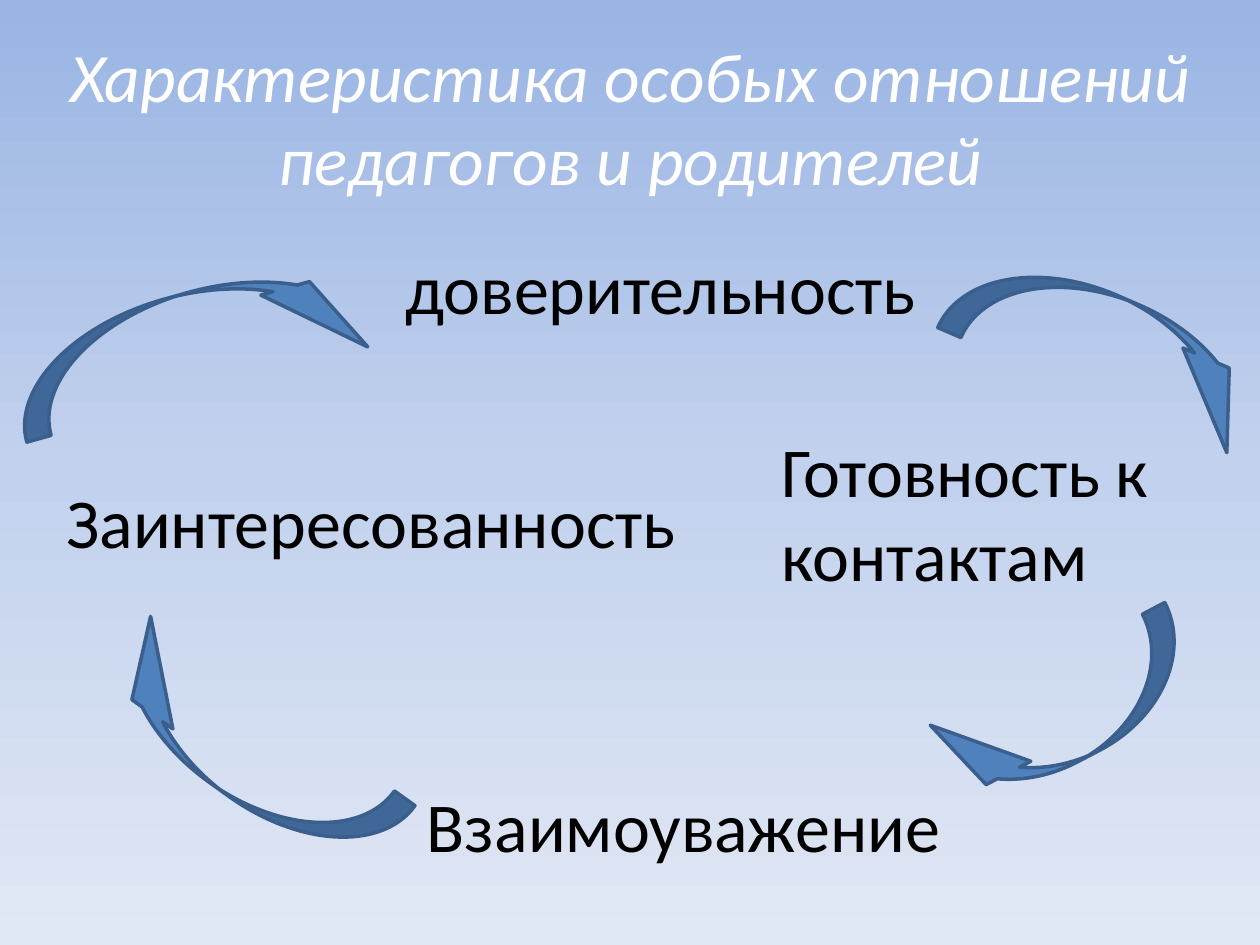
from copy import deepcopy
from typing import NamedTuple

from pptx import Presentation
from pptx.dml.color import RGBColor
from pptx.enum.shapes import MSO_SHAPE
from pptx.enum.text import MSO_ANCHOR, PP_ALIGN
from pptx.oxml.ns import qn
from pptx.slide import Slide
from pptx.util import Pt


class Box(NamedTuple):
    left: float
    top: float
    width: float
    height: float


class Label(NamedTuple):
    text: str
    box: Box


class Arrow(NamedTuple):
    box: Box
    turn: float


ARROWS = [
    Arrow(Box(539.3, 170.6, 194.4, 57.6), 23.4),
    Arrow(Box(522.7, 379.4, 165.6, 57.6), 152.4),
    Arrow(Box(38.9, 396.7, 200.2, 57.6), 215.6),
    Arrow(Box(3.6, 167, 216.7, 57.6), 344.4),
]
LABELS = [
    Label("Готовность к контактам", Box(439.2, 240.5, 260.6, 104.4)),
    Label("Взаимоуважение", Box(236.9, 443.5, 332.6, 55.4)),
    Label("Заинтересованность", Box(31, 270, 372.2, 55.4)),
    Label("доверительность", Box(224.6, 136.1, 311, 55.4)),
]
TITLE = Label("Характеристика особых отношений\nпедагогов и родителей",
              Box(20.2, 21.6, 680.4, 90))
SKY = ["9AB5E4", "C2D1ED", "E1E8F5"]


def paint(code: str) -> RGBColor:
    return RGBColor.from_string(code)


def place(box: Box) -> list[Pt]:
    return [Pt(side) for side in box]


def write(slide: Slide, label: Label, *, size: float = 40, color: str = "000000",
          slant: bool = False, align: PP_ALIGN = PP_ALIGN.LEFT,
          anchor: MSO_ANCHOR = MSO_ANCHOR.TOP) -> None:
    frame = slide.shapes.add_textbox(*place(label.box)).text_frame
    frame.word_wrap = True
    frame.vertical_anchor = anchor
    para = frame.paragraphs[0]
    para.text = label.text.replace("\n", "\v")
    para.alignment = align
    for run in para.runs:
        font = run.font
        font.name, font.size, font.italic = "Calibri", Pt(size), slant
        font.color.rgb = paint(color)


def draw(slide: Slide, arrow: Arrow) -> None:
    shape = slide.shapes.add_shape(MSO_SHAPE.CURVED_DOWN_ARROW, *place(arrow.box))
    shape.rotation = arrow.turn
    for index, value in enumerate((0.25, 0.5, 0.78)):
        shape.adjustments[index] = value
    shape.shadow.inherit = False
    shape.fill.solid()
    shape.fill.fore_color.rgb = paint("4F81BD")
    shape.line.color.rgb = paint("3A5F8C")
    shape.line.width = Pt(2)


def shade(slide: Slide, colors: list[str]) -> None:
    fill = slide.background.fill
    fill.gradient()
    fill.gradient_angle = 270
    stops = slide.element.find(".//" + qn("a:gsLst"))
    stops.insert(1, deepcopy(stops[0]))
    for index, (stop, code) in enumerate(zip(fill.gradient_stops, colors)):
        stop.color.rgb = paint(code)
        stop.position = index / (len(colors) - 1)


def main() -> None:
    """Build the slide of four linked traits."""
    deck = Presentation()
    deck.slide_width, deck.slide_height = Pt(720), Pt(540)
    slide = deck.slides.add_slide(deck.slide_layouts[6])
    shade(slide, SKY)
    write(slide, TITLE, size=39.6, color="FFFFFF", slant=True,
          align=PP_ALIGN.CENTER, anchor=MSO_ANCHOR.MIDDLE)
    for arrow in ARROWS:
        draw(slide, arrow)
    for label in LABELS:
        write(slide, label)
    deck.save("out.pptx")


if __name__ == "__main__":
    main()
